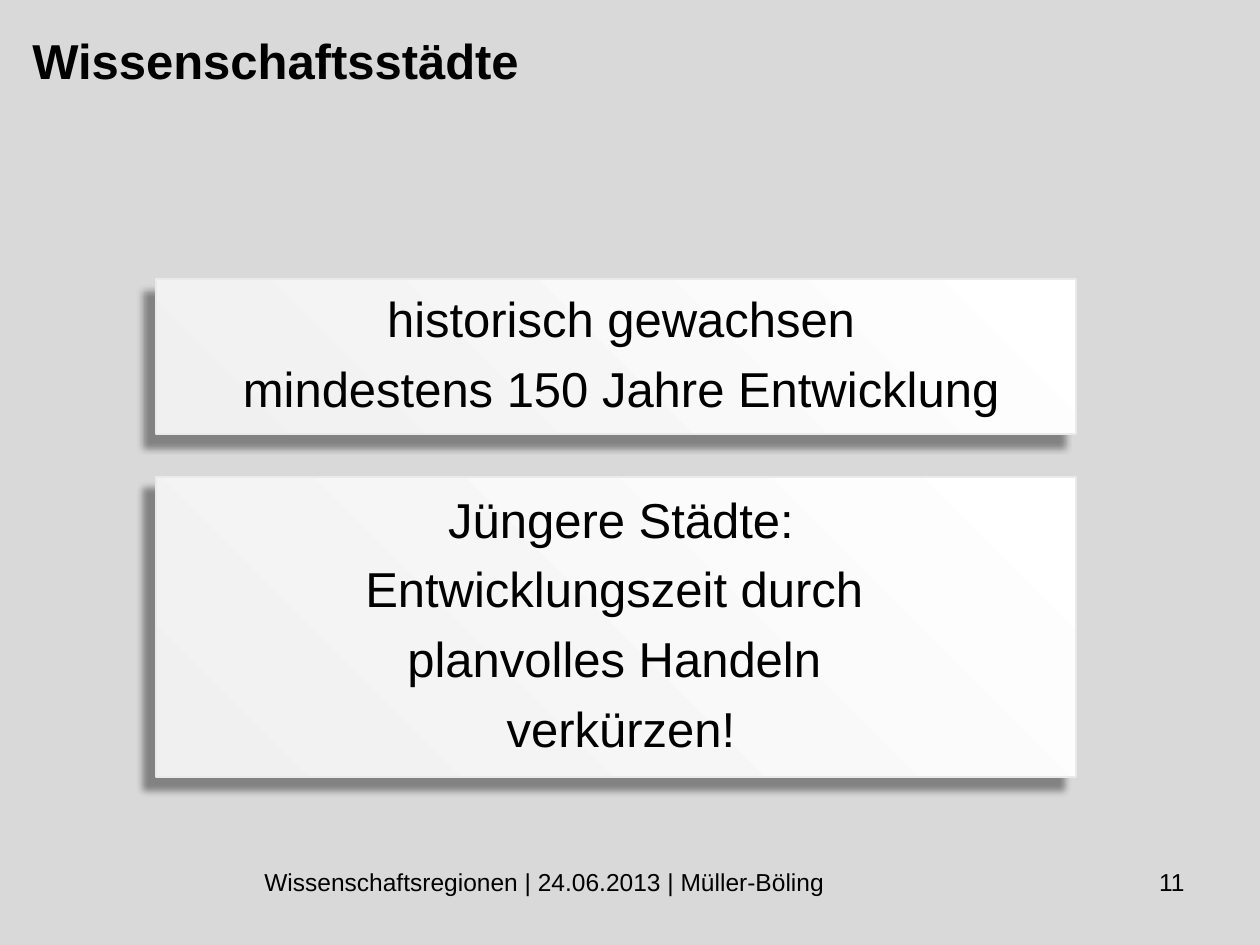
from dataclasses import dataclass

from lxml import etree
from pptx import Presentation
from pptx.dml.color import RGBColor
from pptx.enum.shapes import MSO_SHAPE
from pptx.enum.text import MSO_ANCHOR, PP_ALIGN
from pptx.oxml.ns import qn
from pptx.util import Pt

LEFT, MID, RIGHT = PP_ALIGN.LEFT, PP_ALIGN.CENTER, PP_ALIGN.RIGHT
RECT = MSO_SHAPE.RECTANGLE
TOP, CENTER = MSO_ANCHOR.TOP, MSO_ANCHOR.MIDDLE
PX = 914400 / 126


@dataclass(frozen=True)
class Theme:
    font: str = "Arial"
    back: str = "D9D9D9"
    ink: str = "000000"
    edge: str = "EAEAEA"
    fade: tuple = ("F0F0F0", "FFFFFF")
    big: int = 28
    small: int = 14


THEME = Theme()


def px(n):
    return round(n * PX)


def rgb(code):
    return RGBColor.from_string(code)


def add_run(para, text, size, bold=False):
    run = para.add_run()
    run.text = text
    font = run.font
    font.name, font.size, font.bold = THEME.font, Pt(size), bold
    font.color.rgb = rgb(THEME.ink)


def label(slide, box, text, size, align, bold=False):
    frame = slide.shapes.add_textbox(*map(px, box)).text_frame
    frame.word_wrap = True
    frame.vertical_anchor = TOP
    para = frame.paragraphs[0]
    para.alignment = align
    add_run(para, text, size, bold)


def cast(shape):
    """Soft shadow towards the lower left."""
    shape.shadow.inherit = False
    effects = shape._element.spPr.find(qn("a:effectLst"))
    outer = etree.SubElement(
        effects, qn("a:outerShdw"), blurRad=str(Pt(4)), dist=str(Pt(10)),
        dir="8100000", algn="ctr", rotWithShape="0")
    tint = etree.SubElement(outer, qn("a:srgbClr"), val=THEME.ink)
    etree.SubElement(tint, qn("a:alpha"), val="40000")


def panel(slide, box, lines):
    shape = slide.shapes.add_shape(RECT, *map(px, box))
    # Fill, edge and shadow
    shape.fill.gradient()
    shape.fill.gradient_angle = 45
    for stop, code in zip(shape.fill.gradient_stops, THEME.fade):
        stop.color.rgb = rgb(code)
    shape.line.color.rgb = rgb(THEME.edge)
    shape.line.width = Pt(1.5)
    cast(shape)
    # Centred lines
    frame = shape.text_frame
    frame.word_wrap = True
    frame.vertical_anchor = CENTER
    frame.margin_left = px(15)
    frame.margin_top = frame.margin_right = frame.margin_bottom = px(5)
    for i, text in enumerate(lines):
        para = frame.add_paragraph() if i else frame.paragraphs[0]
        para.alignment = MID
        para.line_spacing = 0.9
        para.space_after = Pt(9.7)
        add_run(para, text, THEME.big)


def footer(slide, box, text, number):
    x, y, w, h = box
    split = 717
    label(slide, (x, y, split, h), text, THEME.small, MID)
    label(slide, (x + split, y, w - split, h), number, THEME.small, RIGHT)


def main():
    deck = Presentation()
    deck.slide_width, deck.slide_height = px(1260), px(945)
    slide = deck.slides.add_slide(deck.slide_layouts[6])
    slide.background.fill.solid()
    slide.background.fill.fore_color.rgb = rgb(THEME.back)

    # Title
    label(slide, (20, 24, 945, 88), "Wissenschaftsstädte", THEME.big, LEFT, True)

    # Statements
    panel(slide, (156, 279, 920, 155),
          ["historisch gewachsen", "mindestens 150 Jahre Entwicklung"])
    panel(slide, (156, 477, 920, 300),
          ["Jüngere Städte:", "Entwicklungszeit durch ",
           "planvolles Handeln ", "verkürzen!"])

    # Footer
    footer(slide, (186, 861, 1011, 66),
           "Wissenschaftsregionen | 24.06.2013 | Müller-Böling", "11")
    deck.save("out.pptx")


if __name__ == "__main__":
    main()
